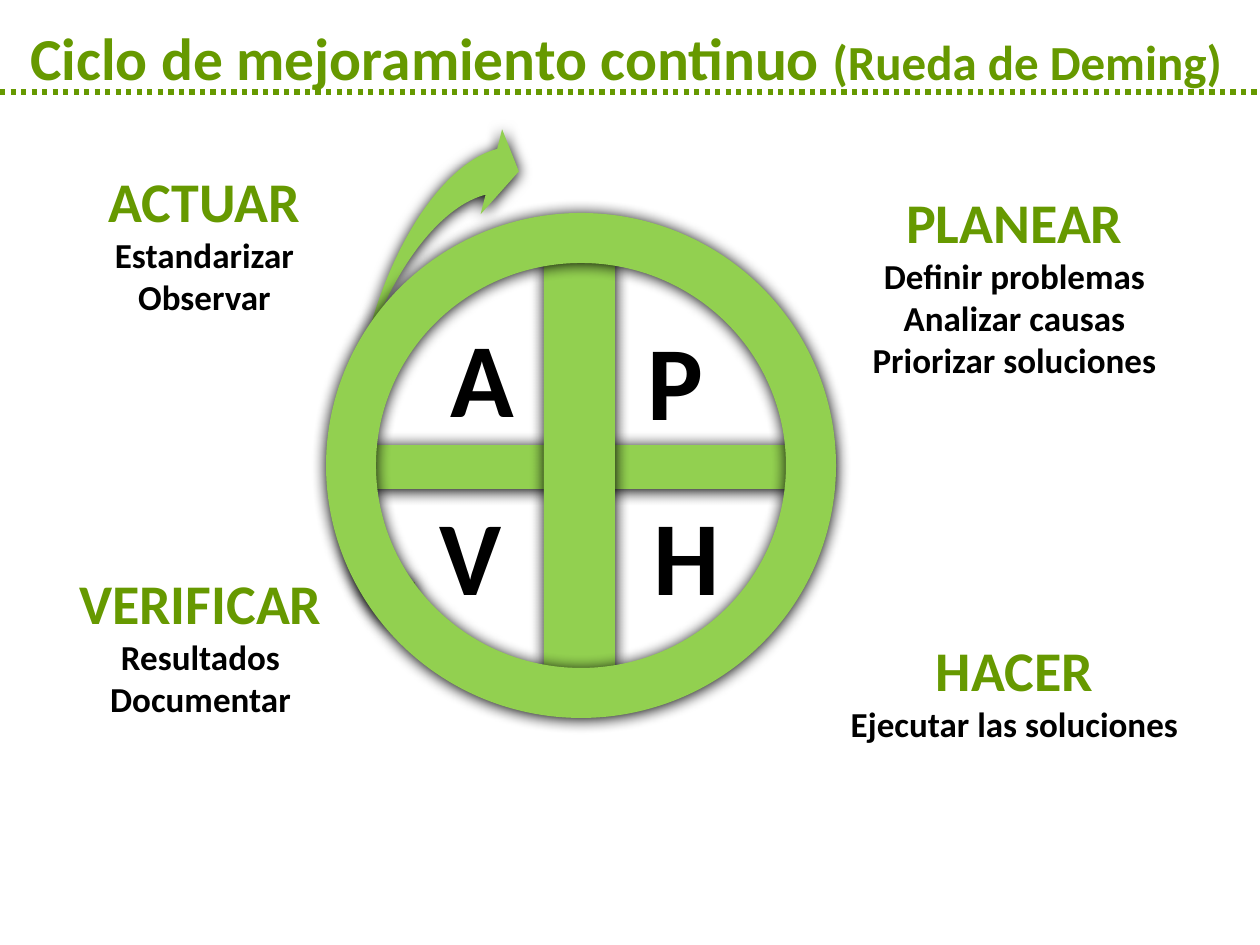
"""Build the continuous improvement cycle slide (Deming wheel)."""
from lxml import etree
from pptx import Presentation
from pptx import util as u
from pptx.dml.color import RGBColor
from pptx.enum import dml, shapes, text
from pptx.oxml import ns

PX = 914400 / 126
FONT = "Calibri"
DARK_GREEN = RGBColor(0x66, 0x99, 0x00)
LIGHT_GREEN = RGBColor(0x92, 0xD0, 0x50)
BLACK = RGBColor(0, 0, 0)

STAGES = [
    (-11, 160, ["ACTUAR", "Estandarizar", "Observar"]),
    (799, 181, ["PLANEAR", "Definir problemas", "Analizar causas",
                "Priorizar soluciones"]),
    (799, 629, ["HACER", "Ejecutar las soluciones"]),
    (-15, 562, ["VERIFICAR", "Resultados", "Documentar"]),
]
LETTERS = [("A", 438, 306), ("P", 635, 309), ("V", 427, 484), ("H", 641, 484)]


def px(*lengths):
    """Turn pixel lengths into EMU."""
    return [u.Emu(round(length * PX)) for length in lengths]


def add_span(para, words, size, color):
    """Add one bold run to a paragraph."""
    span = para.add_run()
    span.text = words
    span.font.name = FONT
    span.font.size = u.Pt(size)
    span.font.bold = True
    span.font.color.rgb = color


def add_text(page, bounds, lines, align=text.PP_ALIGN.LEFT):
    """Add a text box whose lines are lists of (words, size, color)."""
    frame = page.shapes.add_textbox(*px(*bounds)).text_frame
    frame.word_wrap = True
    frame.vertical_anchor = text.MSO_ANCHOR.TOP
    for index, spans in enumerate(lines):
        para = frame.paragraphs[0] if index == 0 else frame.add_paragraph()
        para.alignment = align
        for span in spans:
            add_span(para, *span)


def add_stage(page, left, top, lines):
    """Add a stage heading with its centred activities."""
    heading, *activities = lines
    height = 70 + 42 * len(activities)
    rows = [[(heading, 32, DARK_GREEN)]]
    rows += [[(activity, 20, BLACK)] for activity in activities]
    add_text(page, (left, top, 431, height), rows, text.PP_ALIGN.CENTER)


def add_shadow(shape):
    """Give a shape a soft black shadow just below it."""
    shape.shadow.inherit = False
    effects = shape._element.spPr.find(ns.qn("a:effectLst"))
    shadow = etree.SubElement(
        effects, ns.qn("a:outerShdw"), blurRad=str(u.Pt(8.5)),
        dist=str(u.Pt(1)), dir="5400000", algn="t", rotWithShape="0")
    etree.SubElement(shadow, ns.qn("a:srgbClr"), val=str(BLACK))


def add_wheel_part(page, kind, bounds, adjustments=()):
    """Add one green, shadowed part of the wheel."""
    part = page.shapes.add_shape(kind, *px(*bounds))
    for index, value in enumerate(adjustments):
        part.adjustments[index] = value
    part.fill.solid()
    part.fill.fore_color.rgb = LIGHT_GREEN
    part.line.fill.background()
    add_shadow(part)
    return part


def add_wheel(page):
    """Add the spokes, the turning arrow, the rim and the letters."""
    kinds = shapes.MSO_SHAPE
    add_wheel_part(page, kinds.RECTANGLE, (338, 445, 490, 44))
    add_wheel_part(page, kinds.RECTANGLE, (544, 252, 71, 431))
    arrow = add_wheel_part(page, kinds.CURVED_RIGHT_ARROW,
                           (362, 108, 106, 515), (0.445, 0.827, 0.25))
    arrow.rotation = 14.2
    arrow._element.spPr.xfrm.set("flipV", "1")
    add_wheel_part(page, kinds.DONUT, (326, 213, 510, 505), (0.099,))
    for letter, left, top in LETTERS:
        add_text(page, (left, top, 98, 140), [[(letter, 60, BLACK)]])


def add_dotted_rule(page, y):
    """Add a dotted line across the whole page."""
    rule = page.shapes.add_connector(
        shapes.MSO_CONNECTOR.STRAIGHT, *px(0, y, 1260, y))
    rule.line.color.rgb = DARK_GREEN
    rule.line.width = u.Pt(3)
    rule.line.dash_style = dml.MSO_LINE.ROUND_DOT
    etree.SubElement(rule._element.spPr, ns.qn("a:effectLst"))


def main():
    """Build and save the deck."""
    deck = Presentation()
    deck.slide_width, deck.slide_height = px(1260, 945)
    page = deck.slides.add_slide(deck.slide_layouts[6])
    add_dotted_rule(page, 92)
    add_text(page, (18, 15, 1242, 68), [[
        ("Ciclo de mejoramiento continuo ", 34, DARK_GREEN),
        ("(Rueda de Deming)", 28, DARK_GREEN)]])
    for stage in STAGES:
        add_stage(page, *stage)
    add_wheel(page)
    deck.save("out.pptx")


if __name__ == "__main__":
    main()
